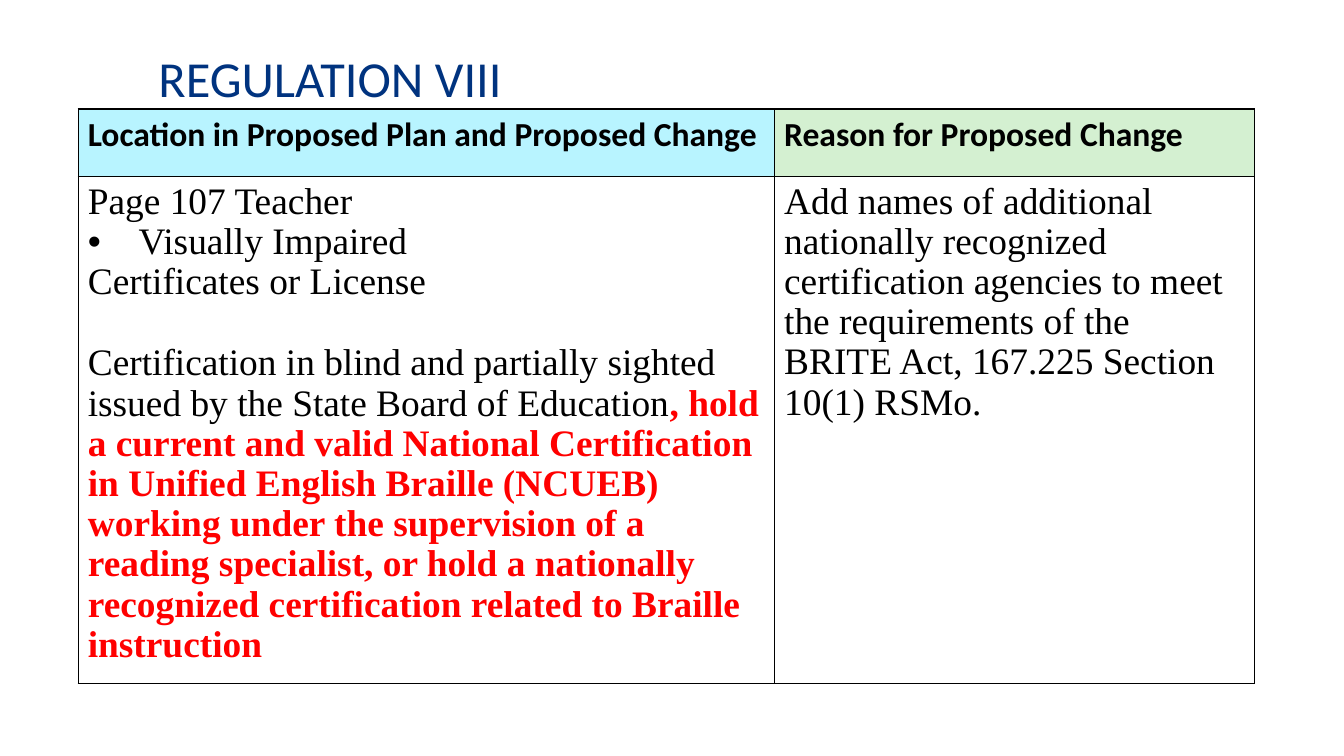
from dataclasses import dataclass

from lxml.etree import SubElement
from pptx import Presentation
from pptx.dml.color import RGBColor as Rgb
from pptx.enum.text import MSO_ANCHOR as Anchor, PP_ALIGN as Align
from pptx.oxml.ns import qn
from pptx.util import Cm, Pt


@dataclass(frozen=True)
class Theme:
    heading_font: str = "Calibri"
    body_font: str = "Times New Roman"
    navy: str = "00337F"
    black: str = "000000"
    red: str = "FF0000"
    white: str = "FFFFFF"
    cyan: str = "B8F4FF"
    green: str = "D4F0D1"
    title_size: int = 27
    header_size: int = 18
    body_size: int = 20
    body_spacing: float = 0.97


THEME = Theme()


def add_text(para, text, *, font, size, color, bold=False):
    """Add one formatted span to a paragraph."""
    span = para.add_run()
    span.text = text
    span.font.name = font
    span.font.size = Pt(size)
    span.font.bold = bold
    span.font.color.rgb = Rgb.from_string(color)


class SlideBuilder:
    def __init__(self, page, theme):
        self.page = page
        self.theme = theme

    def title(self, text, left, top, width, height):
        box = self.page.shapes.title
        box.left, box.top, box.width, box.height = map(Cm, (left, top, width, height))
        frame = box.text_frame
        frame.vertical_anchor = Anchor.MIDDLE
        frame.word_wrap = True
        para = frame.paragraphs[0]
        para.alignment = Align.LEFT
        add_text(para, text, font=self.theme.heading_font,
                 size=self.theme.title_size, color=self.theme.navy)

    def table(self, left, top, widths, heights):
        frame = self.page.shapes.add_table(
            len(heights), len(widths), Cm(left), Cm(top), Cm(sum(widths)), Cm(sum(heights)))
        table = frame.table
        table.first_row = table.horz_banding = False
        for column, width in zip(table.columns, widths):
            column.width = Cm(width)
        for row, height in zip(table.rows, heights):
            row.height = Cm(height)
        return table

    def cell(self, cell, fill):
        cell.margin_left = cell.margin_right = Cm(0.18)
        cell.margin_top = cell.margin_bottom = Cm(0.1)
        # Borders come before the fill in the cell properties
        properties = cell._tc.get_or_add_tcPr()
        for side in ("lnL", "lnR", "lnT", "lnB"):
            line = SubElement(properties, qn(f"a:{side}"), w=str(Pt(1)))
            solid = SubElement(line, qn("a:solidFill"))
            SubElement(solid, qn("a:srgbClr"), val=self.theme.black)
        cell.fill.solid()
        cell.fill.fore_color.rgb = Rgb.from_string(fill)

    def header(self, cell, text, fill):
        self.cell(cell, fill)
        add_text(cell.text_frame.paragraphs[0], text, font=self.theme.heading_font,
                 size=self.theme.header_size, color=self.theme.black, bold=True)

    def body(self, cell, paragraphs):
        self.cell(cell, self.theme.white)
        frame = cell.text_frame
        for index, content in enumerate(paragraphs):
            para = frame.add_paragraph() if index else frame.paragraphs[0]
            para.line_spacing = self.theme.body_spacing
            para.space_before = Pt(content.get("gap", 0))
            if content.get("bullet"):
                self.bullet(para)
            for text, changed in content["spans"]:
                color = self.theme.red if changed else self.theme.black
                add_text(para, text, font=self.theme.body_font,
                         size=self.theme.body_size, color=color, bold=changed)

    def bullet(self, para):
        properties = para._p.get_or_add_pPr()
        indent = Cm(0.96)
        properties.set("marL", str(indent))
        properties.set("indent", str(-indent))
        SubElement(properties, qn("a:buFont"), typeface="Arial")
        SubElement(properties, qn("a:buChar"), char="•")


def main():
    deck = Presentation()
    deck.slide_width, deck.slide_height = Cm(25.4), Cm(14.29)
    page = deck.slides.add_slide(deck.slide_layouts[5])
    builder = SlideBuilder(page, THEME)

    # Title
    builder.title("REGULATION VIII", 2.74, 0.56, 22.66, 1.8)

    # Table of proposed changes
    table = builder.table(1.48, 2.06, widths=(13.16, 9.07), heights=(1.28, 9.58))
    headers = (("Location in Proposed Plan and Proposed Change", THEME.cyan),
               ("Reason for Proposed Change", THEME.green))
    for column, (text, fill) in enumerate(headers):
        builder.header(table.cell(0, column), text, fill)

    # Each span is a text and whether it is newly proposed wording
    location = [
        {"spans": [("Page 107 Teacher", False)]},
        {"spans": [("Visually Impaired", False)], "bullet": True},
        {"spans": [("Certificates or License", False)]},
        {"gap": 22, "spans": [
            ("Certification in blind and partially sighted issued by the "
             "State Board of Education", False),
            (", hold a current and valid National Certification in Unified English "
             "Braille (NCUEB) working under the supervision of a reading specialist, "
             "or hold a nationally recognized certification related to Braille "
             "instruction", True)]},
    ]
    reason = [{"spans": [
        ("Add names of additional nationally recognized certification agencies to meet "
         "the requirements of the BRITE Act, 167.225 Section 10(1) RSMo.", False)]}]
    for column, paragraphs in enumerate((location, reason)):
        builder.body(table.cell(1, column), paragraphs)

    deck.save("out.pptx")


if __name__ == "__main__":
    main()
